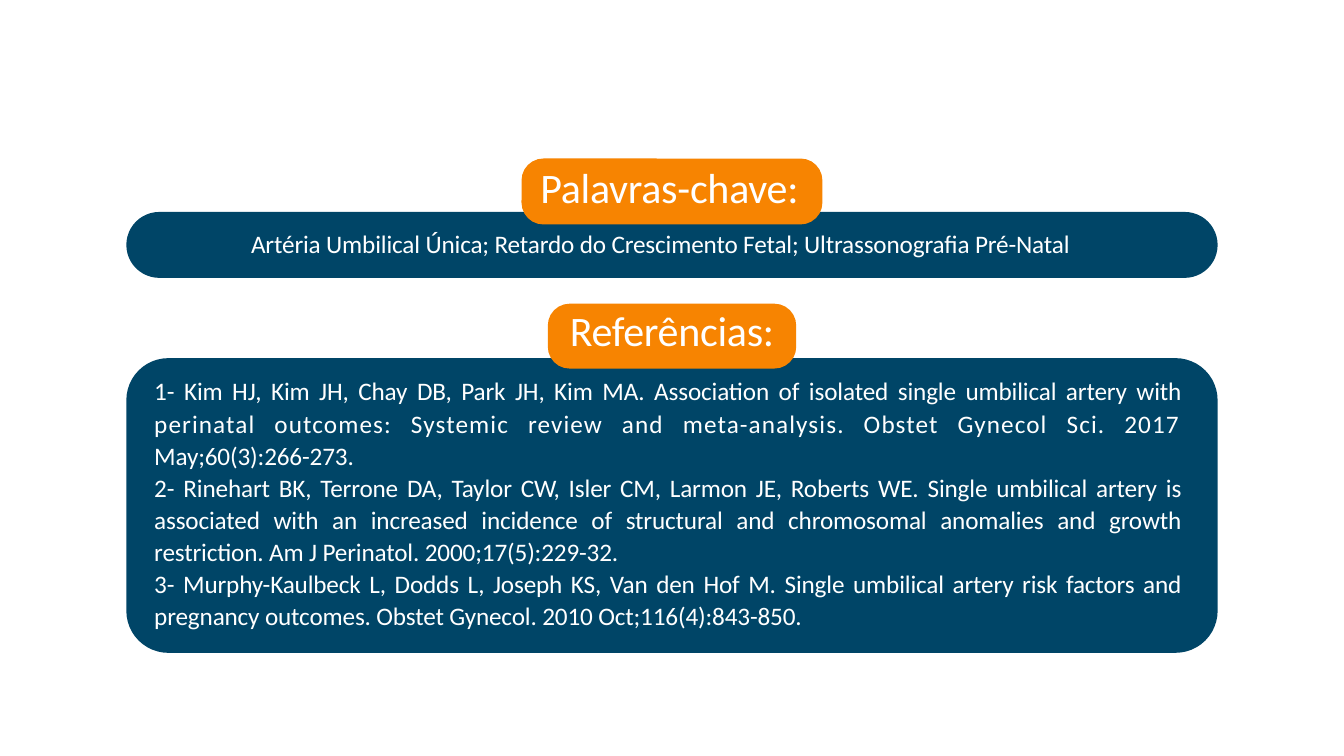
"""Build a slide with keywords and references in rounded panels."""
from dataclasses import dataclass

from lxml import etree
from pptx import Presentation
from pptx.dml.color import RGBColor
from pptx.enum.shapes import MSO_SHAPE
from pptx.enum.text import MSO_ANCHOR, PP_ALIGN
from pptx.oxml.ns import qn
from pptx.util import Inches, Pt

ROUND = MSO_SHAPE.ROUNDED_RECTANGLE
TOP = MSO_ANCHOR.TOP
LEFT, CENTER, JUST = PP_ALIGN.LEFT, PP_ALIGN.CENTER, PP_ALIGN.JUSTIFY
NAVY = RGBColor(0x00, 0x45, 0x67)
ORANGE = RGBColor(0xF7, 0x84, 0x01)
WHITE = RGBColor(0xFF, 0xFF, 0xFF)
FONT = "Calibri"
HEAD, BODY = 30, 18


@dataclass(frozen=True)
class Panel:
    left: float
    top: float
    width: float
    height: float
    radius: float
    color: RGBColor


@dataclass(frozen=True)
class Span:
    text: str
    space: float = -0.1


PANELS = (
    Panel(1.26, 2.11, 10.81, 0.64, 0.32, NAVY),
    Panel(5.18, 1.58, 2.97, 0.64, 0.21, ORANGE),
    Panel(1.26, 3.56, 10.81, 2.91, 0.41, NAVY),
    Panel(5.44, 3.02, 2.45, 0.63, 0.21, ORANGE),
)
TITLE = Span("Palavras-chave:", -0.2)
LABEL = Span("Referências:", -0.2)
KEYS = Span("Artéria Umbilical Única; Retardo do Crescimento Fetal; Ultrassonografia Pré-Natal")
REFS = (
    (
        Span("- Kim HJ, Kim JH, Chay DB, Park JH, Kim MA. Association of isolated single umbilical artery with "),
        Span("perinatal outcomes: Systemic review and meta-analysis. Obstet Gynecol Sci. 2017 ", 0.8),
        Span("May;60(3):266-273."),
    ),
    (
        Span("- Rinehart BK, Terrone DA, Taylor CW, Isler CM, Larmon JE, Roberts WE. Single umbilical artery is "
             "associated with an increased incidence of structural and chromosomal anomalies and growth "
             "restriction. Am J Perinatol. 2000;17(5):229-32."),
    ),
    (
        Span("- Murphy-Kaulbeck L, Dodds L, Joseph KS, Van den Hof M. Single umbilical artery risk factors and "
             "pregnancy outcomes. Obstet Gynecol. 2010 Oct;116(4):843-850."),
    ),
)


def draw_panel(slide, panel: Panel) -> None:
    shape = slide.shapes.add_shape(
        ROUND, *map(Inches, (panel.left, panel.top, panel.width, panel.height)))
    shape.adjustments[0] = panel.radius / panel.height
    shape.shadow.inherit = False
    shape.fill.solid()
    shape.fill.fore_color.rgb = panel.color
    shape.line.color.rgb = panel.color
    shape.line.width = Pt(1)


def place(shape, left: float, top: float, width: float, height: float):
    shape.left, shape.top = Inches(left), Inches(top)
    shape.width, shape.height = Inches(width), Inches(height)
    frame = shape.text_frame
    frame.word_wrap = True
    frame.vertical_anchor = TOP
    frame.margin_left = frame.margin_right = frame.margin_bottom = 0
    frame.margin_top = Inches(0.02)
    return frame


def add_box(slide, left: float, top: float, width: float, height: float):
    return place(slide.shapes.add_textbox(0, 0, 0, 0), left, top, width, height)


def write(para, spans: tuple[Span, ...], size: int, align, number: bool = False) -> None:
    para.alignment = align
    if number:
        para.line_spacing = 1.06
        props = para._p.get_or_add_pPr()
        props.set("marL", str(Inches(0.01)))
        props.set("indent", "0")
        etree.SubElement(props, qn("a:buFont"), typeface="+mj-lt")
        etree.SubElement(props, qn("a:buAutoNum"), type="arabicPlain")
    font = para.font
    font.name, font.size, font.color.rgb = FONT, Pt(size), WHITE
    for span in spans:
        run = para.add_run()
        run.text = span.text
        run._r.get_or_add_rPr().set("spc", str(round(span.space * 100)))


def main() -> None:
    deck = Presentation()
    deck.slide_width, deck.slide_height = Inches(13.33), Inches(7.5)
    slide = deck.slides.add_slide(deck.slide_layouts[5])
    for panel in PANELS:
        draw_panel(slide, panel)

    title = slide.shapes.title
    title.element.getparent().append(title.element)
    frame = place(title, 5.36, 1.58, 2.63, 0.53)
    write(frame.paragraphs[0], (TITLE,), HEAD, LEFT)

    frame = add_box(slide, 2.49, 2.25, 9.31, 0.33)
    write(frame.paragraphs[0], (KEYS,), BODY, LEFT)
    frame = add_box(slide, 5.44, 3, 2.45, 0.53)
    write(frame.paragraphs[0], (LABEL,), HEAD, CENTER)

    frame = add_box(slide, 1.52, 3.69, 10.2, 2.58)
    for index, spans in enumerate(REFS):
        para = frame.add_paragraph() if index else frame.paragraphs[0]
        write(para, spans, BODY, JUST, number=True)
    deck.save("out.pptx")


if __name__ == "__main__":
    main()
